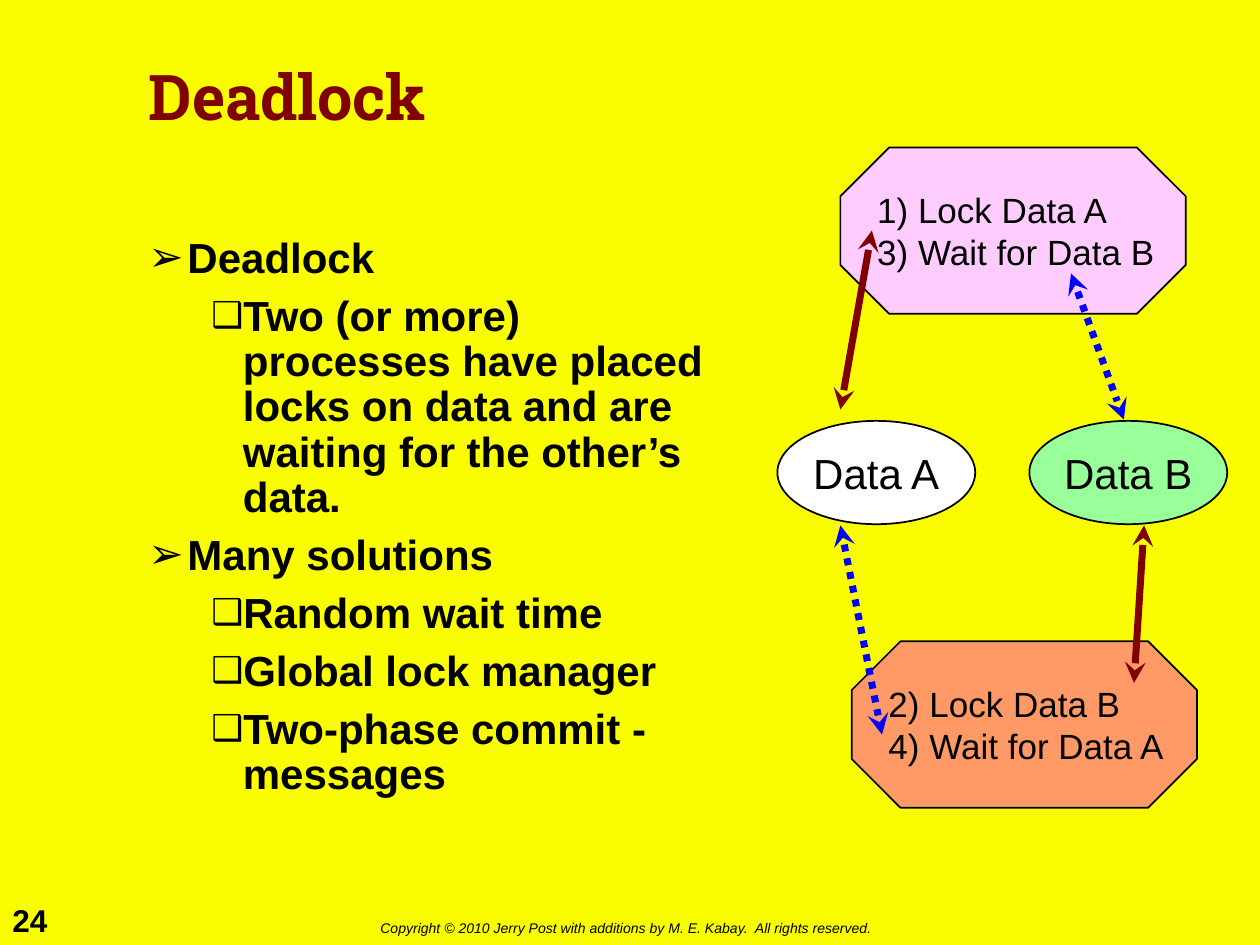
import pptx
import pptx.util
from lxml import etree
from pptx.dml.color import RGBColor
from pptx.enum.dml import MSO_LINE
from pptx.enum.shapes import MSO_CONNECTOR, MSO_SHAPE
from pptx.enum.text import MSO_ANCHOR, PP_ALIGN
from pptx.oxml.ns import qn
from pptx.util import Inches, Pt

YELLOW = RGBColor(0xFA, 0xFD, 0x00)
MAROON = RGBColor(0x80, 0x00, 0x00)
BLUE = RGBColor(0x00, 0x00, 0xFF)
BLACK = RGBColor(0x00, 0x00, 0x00)
WHITE = RGBColor(0xFF, 0xFF, 0xFF)
GREEN = RGBColor(0x99, 0xFF, 0x99)
PINK = RGBColor(0xFF, 0xCC, 0xFF)
ORANGE = RGBColor(0xFF, 0x99, 0x66)

TITLE = "Deadlock"
PAGE_NUMBER = "24"
COPYRIGHT = "Copyright © 2010 Jerry Post with additions by M. E. Kabay.  All rights reserved."

OUTLINE = [  # level, text
    (0, "Deadlock"),
    (1, "Two (or more) processes have placed locks on data and are "
        "waiting for the other’s data."),
    (0, "Many solutions"),
    (1, "Random wait time"),
    (1, "Global lock manager"),
    (1, "Two-phase commit - messages"),
]
BULLETS = [  # per level: symbol, size %, left margin, hanging indent
    ("➢", 100, 0.31, 0.31),
    ("❑", 85, 0.75, 0.25),
]

DATA_SIZE = (1.57, 0.82)
DATA_ITEMS = [  # left, top, fill, text
    (6.17, 3.34, WHITE, "Data A"),
    (8.17, 3.34, GREEN, "Data B"),
]
PROCESS_SIZE = (2.74, 1.32)
PROCESSES = [  # left, top, fill, steps
    (6.67, 1.17, PINK, ["1) Lock Data A", "3) Wait for Data B"]),
    (6.76, 5.09, ORANGE, ["2) Lock Data B", "4) Wait for Data A"]),
]
LOCKS = [((6.92, 1.83), (6.67, 3.25)), ((9.08, 4.17), (9, 5.42))]
WAITS = [((8.5, 2.17), (8.92, 3.33)), ((6.67, 4.17), (7, 5.83))]


def write(paragraph, text, font="Arial", size=24, color=BLACK, bold=False,
          italic=False, align=PP_ALIGN.LEFT, spacing=None):
    paragraph.alignment = align
    if spacing:
        paragraph.line_spacing = spacing
    run = paragraph.add_run()
    run.text = text
    run.font.name = font
    run.font.size = Pt(size)
    run.font.color.rgb = color
    run.font.bold = bold
    run.font.italic = italic


def next_paragraph(frame, index):
    return frame.add_paragraph() if index else frame.paragraphs[0]


def add_label(slide, box, text, margins=(0.1, 0.05), **style):
    frame = slide.shapes.add_textbox(*map(Inches, box)).text_frame
    frame.word_wrap = False
    frame.margin_left = frame.margin_right = Inches(margins[0])
    frame.margin_top = frame.margin_bottom = Inches(margins[1])
    write(frame.paragraphs[0], text, **style)


def set_bullet(paragraph, symbol, percent, margin, hanging):
    properties = paragraph._p.get_or_add_pPr()
    properties.set("marL", str(Inches(margin)))
    properties.set("indent", str(-Inches(hanging)))
    color = etree.SubElement(properties, qn("a:buClr"))
    etree.SubElement(color, qn("a:srgbClr"), val=str(BLACK))
    etree.SubElement(properties, qn("a:buSzPct"), val=str(percent * 1000))
    etree.SubElement(properties, qn("a:buFont"), typeface="Arial")
    etree.SubElement(properties, qn("a:buChar"), char=symbol)


def add_outline(slide):
    box = slide.shapes.add_textbox(
        Inches(1.08), Inches(1.83), Inches(4.76), Inches(5.08))
    frame = box.text_frame
    frame.word_wrap = True
    for index, (level, text) in enumerate(OUTLINE):
        paragraph = next_paragraph(frame, index)
        paragraph.level = level
        set_bullet(paragraph, *BULLETS[level])
        if index:
            paragraph.space_before = Pt(7.2)
        write(paragraph, text, bold=True, spacing=0.9)


def add_node(slide, kind, position, extent, fill, lines, **style):
    node = slide.shapes.add_shape(kind, *map(Inches, position + extent))
    node.shadow.inherit = False
    node.fill.solid()
    node.fill.fore_color.rgb = fill
    node.line.color.rgb = BLACK
    node.line.width = Pt(1)
    frame = node.text_frame
    frame.word_wrap = False
    frame.vertical_anchor = MSO_ANCHOR.MIDDLE
    for index, text in enumerate(lines):
        write(next_paragraph(frame, index), text, **style)


def add_double_arrow(slide, start, end, color, dash=None):
    arrow = slide.shapes.add_connector(
        MSO_CONNECTOR.STRAIGHT, *map(Inches, start + end))
    arrow.line.color.rgb = color
    arrow.line.width = Pt(4)
    if dash:
        arrow.line.dash_style = dash
    outline = arrow.line._get_or_add_ln()
    for tip in ("a:headEnd", "a:tailEnd"):
        etree.SubElement(outline, qn(tip), type="stealth")
    etree.SubElement(arrow._element.spPr, qn("a:effectLst"))


def main():
    deck = pptx.Presentation()
    deck.slide_width, deck.slide_height = Inches(10), Inches(7.5)
    slide = deck.slides.add_slide(deck.slide_layouts[5])
    slide.background.fill.solid()
    slide.background.fill.fore_color.rgb = YELLOW

    add_label(slide, (0, 7.1, 0.5, 0.4), PAGE_NUMBER, size=18, bold=True)
    add_label(slide, (2.92, 7.25, 4.22, 0.24), COPYRIGHT, size=8, italic=True)

    title = slide.shapes.title
    title.left, title.top = Inches(1.08), Inches(0.17)
    title.width, title.height = Inches(7.83), Inches(1.25)
    title.text_frame.vertical_anchor = MSO_ANCHOR.MIDDLE
    write(title.text_frame.paragraphs[0], TITLE, font="Roboto Slab", size=36,
          color=MAROON, bold=True, spacing=0.9)
    add_outline(slide)

    for left, top, fill, text in DATA_ITEMS:
        add_node(slide, MSO_SHAPE.OVAL, (left, top), DATA_SIZE, fill, [text],
                 align=PP_ALIGN.CENTER)
    for left, top, fill, steps in PROCESSES:
        add_node(slide, MSO_SHAPE.OCTAGON, (left, top), PROCESS_SIZE, fill,
                 steps, size=20)
    for start, end in LOCKS:
        add_double_arrow(slide, start, end, MAROON)
    for start, end in WAITS:
        add_double_arrow(slide, start, end, BLUE, MSO_LINE.ROUND_DOT)

    deck.save("out.pptx")


if __name__ == "__main__":
    main()
